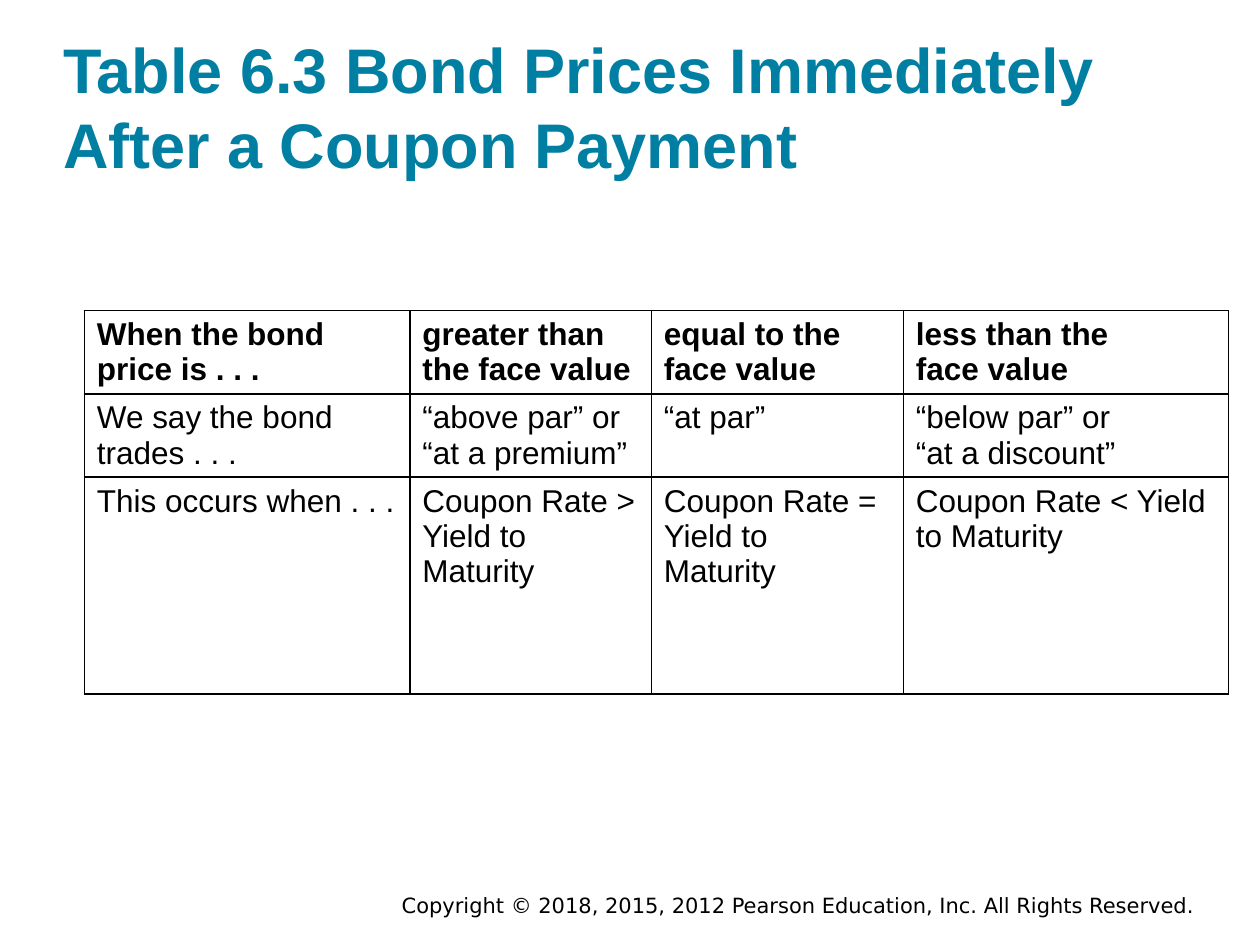
from lxml import etree
from pptx import Presentation
from pptx.dml.color import RGBColor
from pptx.enum.text import MSO_ANCHOR, PP_ALIGN
from pptx.oxml.ns import qn
from pptx.util import Pt

# Content
TITLE = "Table 6.3 Bond Prices Immediately After a Coupon Payment"
COPYRIGHT = "Copyright © 2018, 2015, 2012 Pearson Education, Inc. All Rights Reserved."
BOND_ROWS = [
    ["When the bond\nprice is . . .", "greater than the face value",
     "equal to the\nface value", "less than the\nface value"],
    ["We say the bond\ntrades . . .", "“above par” or\n“at a premium”",
     "“at par”", "“below par” or\n“at a discount”"],
    ["This occurs when . . .", "Coupon Rate > Yield to Maturity",
     "Coupon Rate = Yield to\nMaturity", "Coupon Rate < Yield to Maturity"],
]

# Layout and formats, in points
TITLE_BOX = (36, 17.3, 648, 86.4)
COPYRIGHT_BOX = (126, 506.2, 563.8, 21.6)
TABLE_ORIGIN = (48.2, 177.5)
COLUMN_WIDTHS = [186, 138, 144, 186]
ROW_HEIGHTS = [47.6, 47.6, 123.8]
TITLE_FORMAT = {"name": "Arial", "size": Pt(36), "bold": True}
COPYRIGHT_FORMAT = {"name": "DejaVu Sans", "size": Pt(12), "bold": False}
CELL_FORMAT = {"name": "Arial", "size": Pt(18)}


def color(hex_text):
    return RGBColor.from_string(hex_text)


def write(frame, text, font_format, hex_text, align=PP_ALIGN.LEFT):
    frame.text = text
    for paragraph in frame.paragraphs:
        paragraph.alignment = align
        for name, value in font_format.items():
            setattr(paragraph.font, name, value)
        paragraph.font.color.rgb = color(hex_text)


def add_borders(cell, hex_text, width):
    properties = cell._tc.get_or_add_tcPr()
    for index, side in enumerate(("lnL", "lnR", "lnT", "lnB")):
        line = etree.Element(qn(f"a:{side}"), w=str(Pt(width)))
        fill = etree.SubElement(line, qn("a:solidFill"))
        etree.SubElement(fill, qn("a:srgbClr"), val=hex_text)
        properties.insert(index, line)


presentation = Presentation()
presentation.slide_width, presentation.slide_height = Pt(720), Pt(540)
slide = presentation.slides.add_slide(presentation.slide_layouts[5])

# Title
title = slide.shapes.title
title.left, title.top, title.width, title.height = map(Pt, TITLE_BOX)
frame = title.text_frame
for side in ("left", "right", "top", "bottom"):
    setattr(frame, f"margin_{side}", 0)
frame.vertical_anchor = MSO_ANCHOR.BOTTOM
frame.word_wrap = True
write(frame, TITLE, TITLE_FORMAT, "007FA3")

# Bond price table
table = slide.shapes.add_table(
    len(ROW_HEIGHTS), len(COLUMN_WIDTHS), *map(Pt, TABLE_ORIGIN),
    Pt(sum(COLUMN_WIDTHS)), Pt(sum(ROW_HEIGHTS))).table
for column, width in zip(table.columns, COLUMN_WIDTHS):
    column.width = Pt(width)
for row_index, (row, height, texts) in enumerate(zip(table.rows, ROW_HEIGHTS, BOND_ROWS)):
    row.height = Pt(height)
    for cell, text in zip(row.cells, texts):
        cell.fill.solid()
        cell.fill.fore_color.rgb = color("FFFFFF")
        add_borders(cell, "000000", 1)
        write(cell.text_frame, text, CELL_FORMAT | {"bold": row_index == 0}, "000000")

# Copyright line
copyright_box = slide.shapes.add_textbox(*map(Pt, COPYRIGHT_BOX))
copyright_box.text_frame.word_wrap = True
write(copyright_box.text_frame, COPYRIGHT, COPYRIGHT_FORMAT, "000000", PP_ALIGN.RIGHT)

presentation.save("out.pptx")
